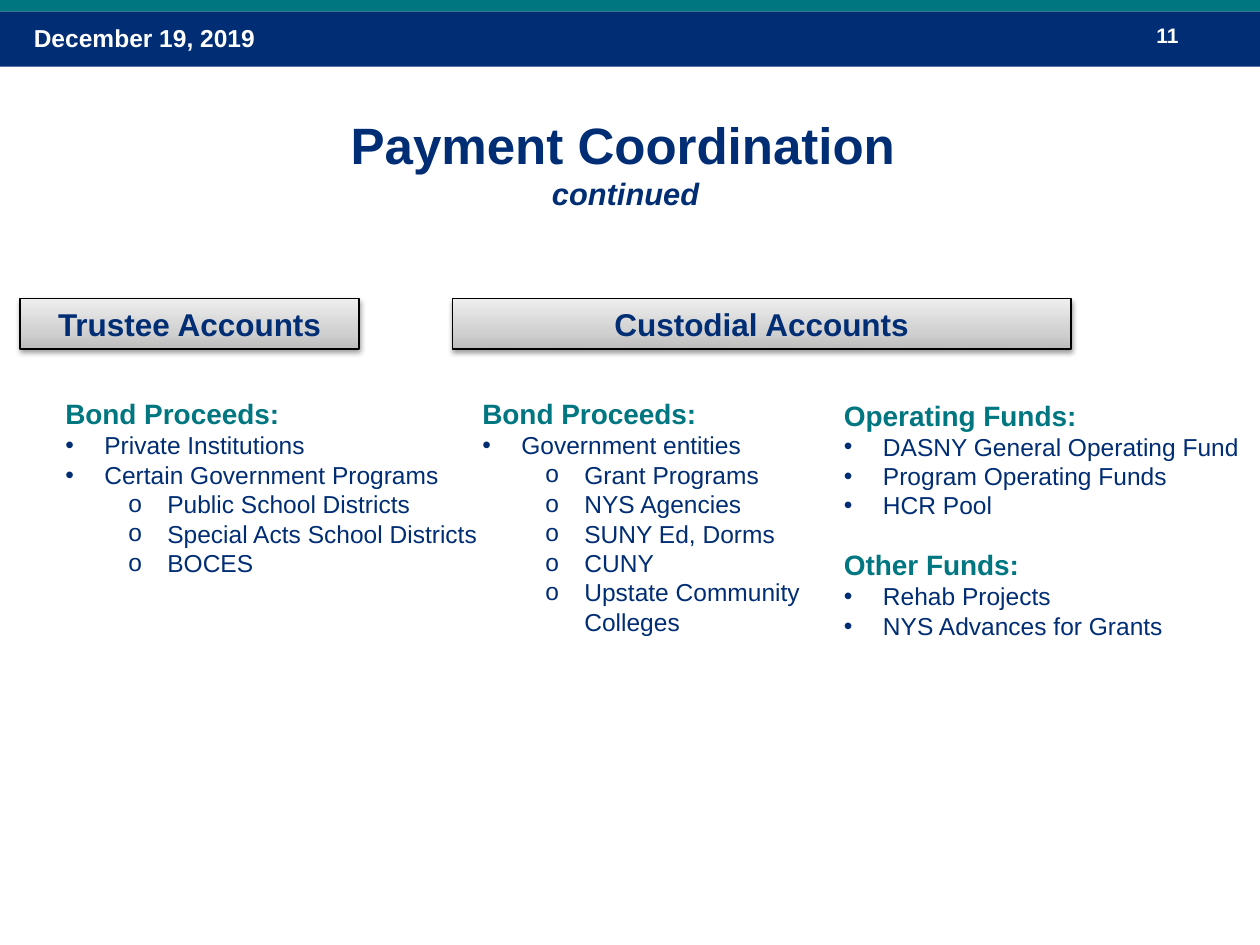
"""Build the payment coordination slide with its account columns."""
from lxml.etree import SubElement
from pptx import Presentation
from pptx.dml.color import RGBColor
from pptx.enum.shapes import MSO_SHAPE
from pptx.enum.text import MSO_ANCHOR, MSO_AUTO_SIZE, PP_ALIGN
from pptx.oxml import parse_xml
from pptx.oxml.ns import nsdecls, qn
from pptx.util import Inches, Pt

NAVY = RGBColor(0x00, 0x2D, 0x73)
TEAL = RGBColor(0x00, 0x76, 0x81)
WHITE = RGBColor(0xFF, 0xFF, 0xFF)
BLACK = RGBColor(0x00, 0x00, 0x00)
BAR_STOPS = [(0, RGBColor(0xBD, 0xBD, 0xBD)), (35, RGBColor(0xD1, 0xD1, 0xD1)),
             (100, RGBColor(0xEE, 0xEE, 0xEE))]

HEADING, ITEM, SUBITEM = "heading", "item", "subitem"
BULLETS = {ITEM: ("•", 0, 0.31), SUBITEM: ("o", 1, 0.81)}
HANGING = 0.31

TRUSTEE_BONDS = [
    (HEADING, "Bond Proceeds:"),
    (ITEM, "Private Institutions"),
    (ITEM, "Certain Government Programs"),
    (SUBITEM, "Public School Districts"),
    (SUBITEM, "Special Acts School Districts"),
    (SUBITEM, "BOCES"),
]
CUSTODIAL_BONDS = [
    (HEADING, "Bond Proceeds:"),
    (ITEM, "Government entities"),
    (SUBITEM, "Grant Programs"),
    (SUBITEM, "NYS Agencies"),
    (SUBITEM, "SUNY Ed, Dorms"),
    (SUBITEM, "CUNY"),
    (SUBITEM, "Upstate Community Colleges"),
]
CUSTODIAL_FUNDS = [
    (HEADING, "Operating Funds:"),
    (ITEM, "DASNY General Operating Fund"),
    (ITEM, "Program Operating Funds"),
    (ITEM, "HCR Pool"),
    (HEADING, "Other Funds:"),
    (ITEM, "Rehab Projects"),
    (ITEM, "NYS Advances for Grants"),
]


def style(font, size, color, bold=True, italic=False):
    """Set the typeface, size, colour and emphasis of a font."""
    font.name = "Arial"
    font.size = Pt(size)
    font.color.rgb = color
    font.bold = bold
    font.italic = italic


def add_band(page, top, height, color):
    """Add a plain full-width band."""
    band = page.shapes.add_shape(MSO_SHAPE.RECTANGLE, 0, Inches(top),
                                 Inches(10), Inches(height))
    band.shadow.inherit = False
    band.fill.solid()
    band.fill.fore_color.rgb = color
    band.line.fill.background()


def add_text_box(page, left, top, width, height):
    """Add a wrapping text box and return its text frame."""
    box = page.shapes.add_textbox(Inches(left), Inches(top), Inches(width), Inches(height))
    box.text_frame.word_wrap = True
    return box.text_frame


def add_label(page, left, width, text, size):
    """Add a white label on the header band."""
    frame = add_text_box(page, left, 0.13, width, 0.4)
    frame.text = text
    style(frame.paragraphs[0].runs[0].font, size, WHITE)


def add_title(page, title, subtitle):
    """Add the centred title with its subtitle on a second line."""
    frame = add_text_box(page, 0.5, 0.86, 9, 0.87)
    frame.vertical_anchor = MSO_ANCHOR.BOTTOM
    frame.text = f"{title} \v{subtitle} "
    paragraph = frame.paragraphs[0]
    paragraph.alignment = PP_ALIGN.CENTER
    title_span, subtitle_span = paragraph.runs
    style(title_span.font, 29.2, NAVY)
    style(subtitle_span.font, 17.6, NAVY, italic=True)


def add_account_bar(page, left, width, text):
    """Add a grey gradient bar with a soft shadow that names an account type."""
    bar = page.shapes.add_shape(MSO_SHAPE.RECTANGLE, Inches(left), Inches(2.37),
                                Inches(width), Inches(0.4))
    bar.fill.gradient()
    bar.fill.gradient_angle = 90
    stops = bar._element.spPr.find(qn("a:gradFill")).find(qn("a:gsLst"))
    stops.clear()
    for position, color in BAR_STOPS:
        stop = SubElement(stops, qn("a:gs"), pos=str(position * 1000))
        SubElement(stop, qn("a:srgbClr"), val=str(color))
    bar.line.color.rgb = BLACK
    bar.line.width = Pt(0.75)
    bar._element.spPr.append(parse_xml(
        f'<a:effectLst {nsdecls("a")}><a:outerShdw blurRad="{Pt(3.1)}" dist="{Pt(1.6)}" '
        'dir="5400000" rotWithShape="0"><a:srgbClr val="000000"><a:alpha val="38000"/>'
        '</a:srgbClr></a:outerShdw></a:effectLst>'))
    frame = bar.text_frame
    frame.word_wrap = True
    frame.auto_size = MSO_AUTO_SIZE.SHAPE_TO_FIT_TEXT
    frame.text = text
    frame.paragraphs[0].alignment = PP_ALIGN.CENTER
    style(frame.paragraphs[0].runs[0].font, 18, NAVY)


def add_bullet(paragraph, kind):
    """Give a paragraph the bullet, level and hanging indent of its kind."""
    character, level, indent = BULLETS[kind]
    paragraph.level = level
    properties = paragraph._p.get_or_add_pPr()
    properties.set("marL", str(Inches(indent)))
    properties.set("indent", str(-Inches(HANGING)))
    SubElement(properties, qn("a:buFont"), typeface="Arial")
    SubElement(properties, qn("a:buChar"), char=character)


def add_column(page, left, top, width, height, entries):
    """Add a column of headings and bulleted entries."""
    frame = add_text_box(page, left, top, width, height)
    frame.auto_size = MSO_AUTO_SIZE.SHAPE_TO_FIT_TEXT
    frame.text = "\n".join(text for kind, text in entries)
    for index, (paragraph, (kind, text)) in enumerate(zip(frame.paragraphs, entries)):
        span = paragraph.runs[0]
        if kind == HEADING:
            style(span.font, 16, TEAL)
            if index:
                paragraph.space_before = Pt(16)
        else:
            add_bullet(paragraph, kind)
            style(span.font, 14, NAVY, bold=False)


def main():
    """Build and save the slide."""
    deck = Presentation()
    deck.slide_width, deck.slide_height = Inches(10), Inches(7.5)
    page = deck.slides.add_slide(deck.slide_layouts[6])
    add_band(page, 0.09, 0.44, NAVY)
    add_label(page, 0.17, 2.33, "December 19, 2019", 14)
    add_label(page, 9.08, 0.75, "11", 12)
    add_band(page, -0.03, 0.12, TEAL)
    add_account_bar(page, 0.16, 2.69, "Trustee Accounts")
    add_account_bar(page, 3.59, 4.91, "Custodial\u00a0Accounts".replace("\u00a0", " "))
    add_column(page, 0.42, 3.1, 3.56, 1.55, TRUSTEE_BONDS)
    add_column(page, 3.73, 3.1, 2.86, 2.27, CUSTODIAL_BONDS)
    add_column(page, 6.6, 3.11, 3.96, 2.05, CUSTODIAL_FUNDS)
    add_title(page, "Payment Coordination", "continued")
    deck.save("out.pptx")


if __name__ == "__main__":
    main()
